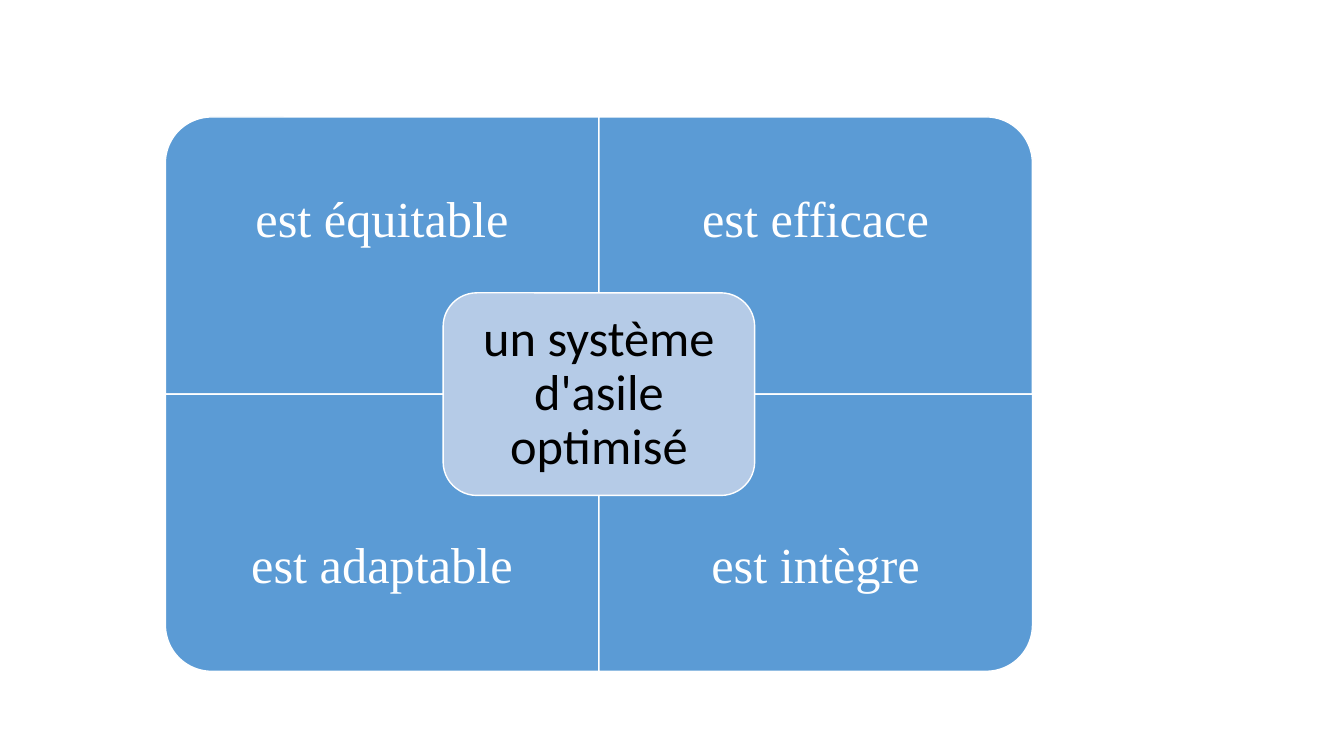
from pptx import Presentation
from pptx.dml.color import RGBColor
from pptx.enum import shapes, text
from pptx.util import Inches, Pt

# (label, column, row, rotation that turns the round corner outwards)
QUADRANTS = [
    ("est équitable", 0, 0, 270),
    ("est efficace", 1, 0, 0),
    ("est adaptable", 0, 1, 180),
    ("est intègre", 1, 1, 90),
]
CENTRE_LABEL = "un système d'asile optimisé"

THEME = {
    "quadrant": RGBColor(0x5B, 0x9B, 0xD5),
    "centre": RGBColor(0xB5, 0xCB, 0xE7),
    "line": RGBColor(0xFF, 0xFF, 0xFF),
    "quadrant_text": RGBColor(0xFF, 0xFF, 0xFF),
    "centre_text": RGBColor(0, 0, 0),
    "quadrant_font": "Times New Roman",
    "centre_font": "Calibri",
    "size": Pt(36),
    "line_width": Pt(1),
}

LEFT, TOP = 1.64, 1.16
QUAD_W, QUAD_H = 4.3, 2.75
LABEL_H = 2.07
MID_X, MID_Y = LEFT + QUAD_W, TOP + QUAD_H
CENTRE_W, CENTRE_H = 3.09, 2.01
CENTRE_PAD = 0.1


def add_block(slide, kind, mid_x, mid_y, w, h, fill, rotation=0):
    """Add a filled shape centred on a point; w and h are as seen after rotation."""
    if rotation % 180:
        w, h = h, w
    sp = slide.shapes.add_shape(kind, Inches(mid_x - w / 2), Inches(mid_y - h / 2),
                                Inches(w), Inches(h))
    sp.rotation = rotation
    sp.shadow.inherit = False
    sp.fill.solid()
    sp.fill.fore_color.rgb = THEME[fill]
    sp.line.color.rgb = THEME["line"]
    sp.line.width = THEME["line_width"]


def add_label(slide, label, x, y, w, h, inset, role):
    tf = slide.shapes.add_textbox(Inches(x), Inches(y), Inches(w), Inches(h)).text_frame
    tf.word_wrap = True
    tf.vertical_anchor = text.MSO_ANCHOR.MIDDLE
    tf.margin_left = tf.margin_right = tf.margin_top = tf.margin_bottom = Inches(inset)
    p = tf.paragraphs[0]
    p.alignment = text.PP_ALIGN.CENTER
    p.line_spacing = 0.9
    r = p.add_run()
    r.text = label
    r.font.name = THEME[role + "_font"]
    r.font.size = THEME["size"]
    r.font.color.rgb = THEME[role + "_text"]


def main():
    prs = Presentation()
    prs.slide_width, prs.slide_height = Inches(13.33), Inches(7.5)
    slide = prs.slides.add_slide(prs.slide_layouts[6])

    for label, col, row, rotation in QUADRANTS:
        x, y = LEFT + col * QUAD_W, TOP + row * QUAD_H
        add_block(slide, shapes.MSO_SHAPE.ROUND_1_RECTANGLE, x + QUAD_W / 2,
                  y + QUAD_H / 2, QUAD_W, QUAD_H, "quadrant", rotation)
        # Labels keep to the outer edge, clear of the centre block
        label_y = y + row * (QUAD_H - LABEL_H)
        add_label(slide, label, x, label_y, QUAD_W, LABEL_H, 0.28, "quadrant")

    add_block(slide, shapes.MSO_SHAPE.ROUNDED_RECTANGLE, MID_X, MID_Y,
              CENTRE_W, CENTRE_H, "centre")
    w, h = CENTRE_W - 2 * CENTRE_PAD, CENTRE_H - 2 * CENTRE_PAD
    add_label(slide, CENTRE_LABEL, MID_X - w / 2, MID_Y - h / 2, w, h, 0.15, "centre")

    prs.save("out.pptx")


if __name__ == "__main__":
    main()
